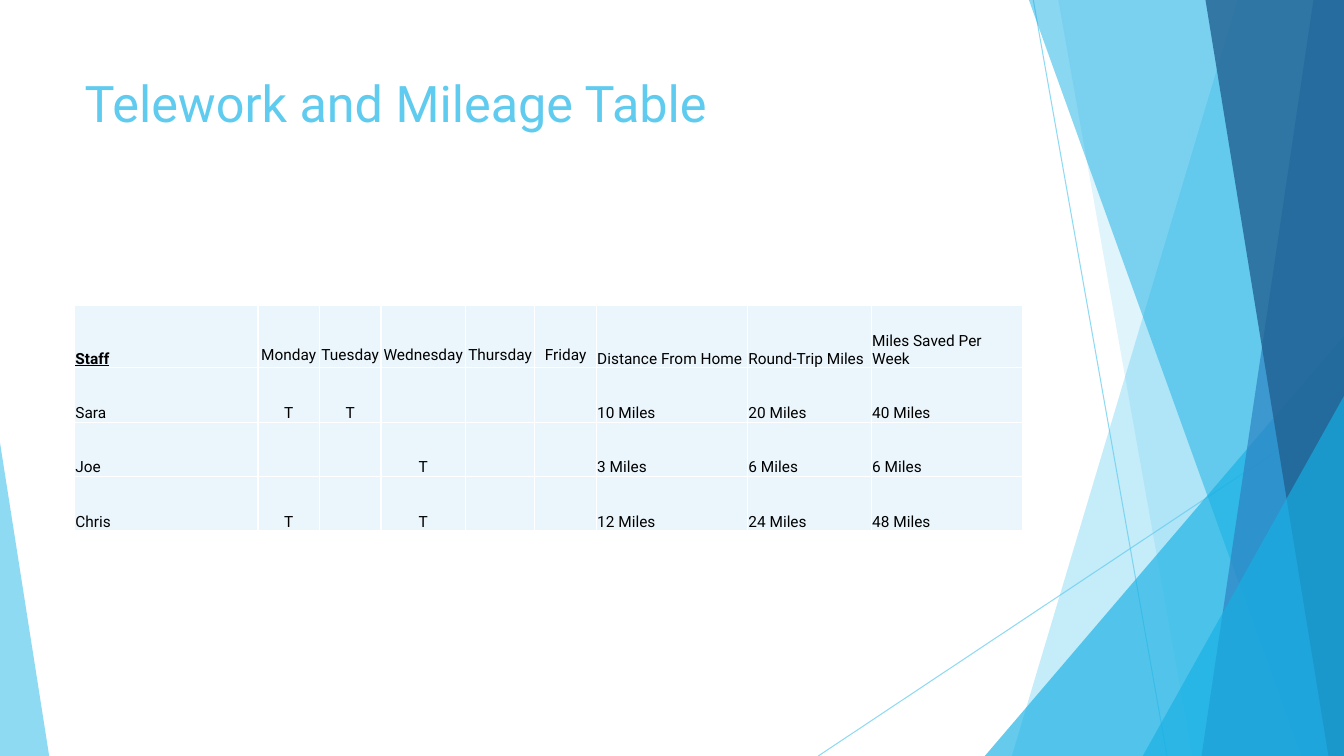
"""Build the telework and mileage table slide."""
from lxml import etree
from pptx import Presentation
from pptx import util as u
from pptx.dml.color import RGBColor
from pptx.enum import shapes, text
from pptx.oxml.ns import qn

TITLE = "Telework and Mileage Table"
FONT = "Roboto"
COLORS = {"sky": "5FCBEF", "cyan": "17B0E4", "blue": "2E83C3", "navy": "226292",
          "cell": "EAF6FC", "white": "FFFFFF", "black": "000000"}
ROWS = [
    ["Staff", "Monday", "Tuesday", "Wednesday", "Thursday", "Friday",
     "Distance From Home", "Round-Trip Miles", "Miles Saved Per Week"],
    ["Sara", "T", "T", "", "", "", "10 Miles", "20 Miles", "40 Miles"],
    ["Joe", "", "", "T", "", "", "3 Miles", "6 Miles", "6 Miles"],
    ["Chris", "T", "", "T", "", "", "12 Miles", "24 Miles", "48 Miles"],
]
DAY_COLUMNS = range(1, 6)
COLUMN_WIDTHS = [4.62, 1.55, 1.55, 2.13, 1.75, 1.55, 3.81, 3.12, 3.81]
ROW_HEIGHTS = [1.57, 1.37, 1.37, 1.37]
WIDTH, HEIGHT = 33.87, 19.05
LEFT, TITLE_TOP, TITLE_HEIGHT, TABLE_TOP = 1.88, 1.7, 3.66, 7.7

RAYS = [(26.04, 0, 29.41, HEIGHT), (WIDTH, 10.24, 20.62, HEIGHT)]
DECOR = [
    ("band", 31.19, 25.5, "sky", 36),
    ("band", 26.67, 30.05, "sky", 20),
    ("corner", 24.82, 8.46, "cyan", 66),
    ("band", 25.93, 32.79, "cyan", 50),
    ("band", 33.1, 30.28, "blue", 70),
    ("band", 30.38, 33.48, "navy", 80),
    ("corner", 28.8, 9.98, "cyan", 66),
]
LEFT_CORNER = (1.24, 11.15, "sky", 70)


def rgb(name):
    return RGBColor.from_string(COLORS[name])


def set_alpha(element, percent):
    for color in element.spPr.iter(qn("a:srgbClr")):
        etree.SubElement(color, qn("a:alpha")).set("val", str(percent * 1000))


def paint(shape, color, percent):
    shape.shadow.inherit = False
    shape.line.fill.background()
    shape.fill.solid()
    shape.fill.fore_color.rgb = rgb(color)
    set_alpha(shape.element, percent)


def add_ray(page, ends):
    ray = page.shapes.add_connector(shapes.MSO_CONNECTOR.STRAIGHT, *map(u.Cm, ends))
    ray.line.width = u.Pt(0.75)
    ray.line.color.rgb = rgb("sky")
    set_alpha(ray.element, 70)
    etree.SubElement(ray.element.spPr, qn("a:effectLst"))


def add_band(page, top_x, bottom_x, color, percent):
    builder = page.shapes.build_freeform(u.Cm(top_x), 0)
    corners = [(WIDTH, 0), (WIDTH, HEIGHT), (bottom_x, HEIGHT)]
    builder.add_line_segments([(u.Cm(x), u.Cm(y)) for x, y in corners], close=True)
    paint(builder.convert_to_shape(), color, percent)


def add_corner(page, left, top, color, percent, right=WIDTH, apex=1):
    corner = page.shapes.add_shape(
        shapes.MSO_SHAPE.ISOSCELES_TRIANGLE,
        u.Cm(left), u.Cm(top), u.Cm(right - left), u.Cm(HEIGHT - top))
    corner.adjustments[0] = apex
    paint(corner, color, percent)


def add_title(page):
    title = page.shapes.title
    title.left, title.top = u.Cm(LEFT), u.Cm(TITLE_TOP)
    title.width, title.height = u.Cm(sum(COLUMN_WIDTHS)), u.Cm(TITLE_HEIGHT)
    title.text_frame.text = TITLE
    title.text_frame.vertical_anchor = text.MSO_ANCHOR.TOP
    para = title.text_frame.paragraphs[0]
    para.alignment = text.PP_ALIGN.LEFT
    font = para.runs[0].font
    font.name, font.size, font.color.rgb = FONT, u.Pt(36), rgb("sky")


def add_borders(cell):
    properties = cell._tc.get_or_add_tcPr()
    for side in ("lnL", "lnR", "lnT", "lnB"):
        line = etree.SubElement(properties, qn("a:" + side), w=str(u.Pt(1)))
        fill = etree.SubElement(line, qn("a:solidFill"))
        etree.SubElement(fill, qn("a:srgbClr"), val=COLORS["white"])


def format_cell(cell, words, is_header, column):
    is_day = column in DAY_COLUMNS
    add_borders(cell)
    cell.fill.solid()
    cell.fill.fore_color.rgb = rgb("cell")
    cell.margin_left = cell.margin_right = cell.margin_top = u.Cm(0.02)
    cell.margin_bottom = u.Cm(0.1 if is_header and is_day else 0)
    cell.vertical_anchor = text.MSO_ANCHOR.BOTTOM
    cell.text_frame.text = words
    para = cell.text_frame.paragraphs[0]
    para.alignment = text.PP_ALIGN.CENTER if is_day else text.PP_ALIGN.LEFT
    for span in para.runs:
        font = span.font
        font.name, font.size, font.color.rgb = FONT, u.Pt(11), rgb("black")
        font.bold = font.underline = is_header and column == 0


def add_mileage_table(page):
    table = page.shapes.add_table(
        len(ROWS), len(COLUMN_WIDTHS), u.Cm(LEFT), u.Cm(TABLE_TOP),
        u.Cm(sum(COLUMN_WIDTHS)), u.Cm(sum(ROW_HEIGHTS))).table
    table.first_row = table.horz_banding = False
    for column, width in zip(table.columns, COLUMN_WIDTHS):
        column.width = u.Cm(width)
    for row, height in zip(table.rows, ROW_HEIGHTS):
        row.height = u.Cm(height)
    for r, row in enumerate(ROWS):
        for c, words in enumerate(row):
            format_cell(table.cell(r, c), words, r == 0, c)


def main():
    deck = Presentation()
    deck.slide_width, deck.slide_height = u.Cm(WIDTH), u.Cm(HEIGHT)
    page = deck.slides.add_slide(deck.slide_layouts[5])
    for ends in RAYS:
        add_ray(page, ends)
    for kind, *details in DECOR:
        (add_band if kind == "band" else add_corner)(page, *details)
    right, top, color, percent = LEFT_CORNER
    add_corner(page, 0, top, color, percent, right=right, apex=0)
    add_title(page)
    add_mileage_table(page)
    deck.save("out.pptx")


if __name__ == "__main__":
    main()
